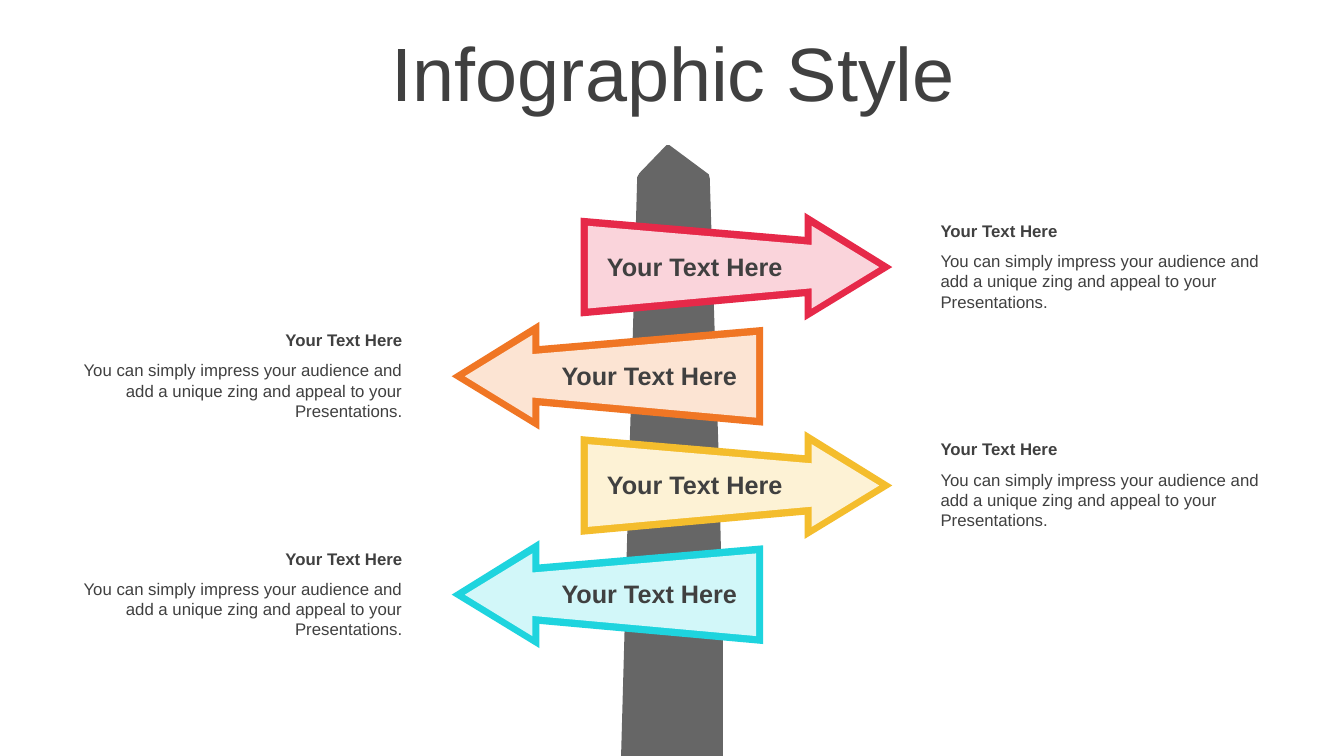
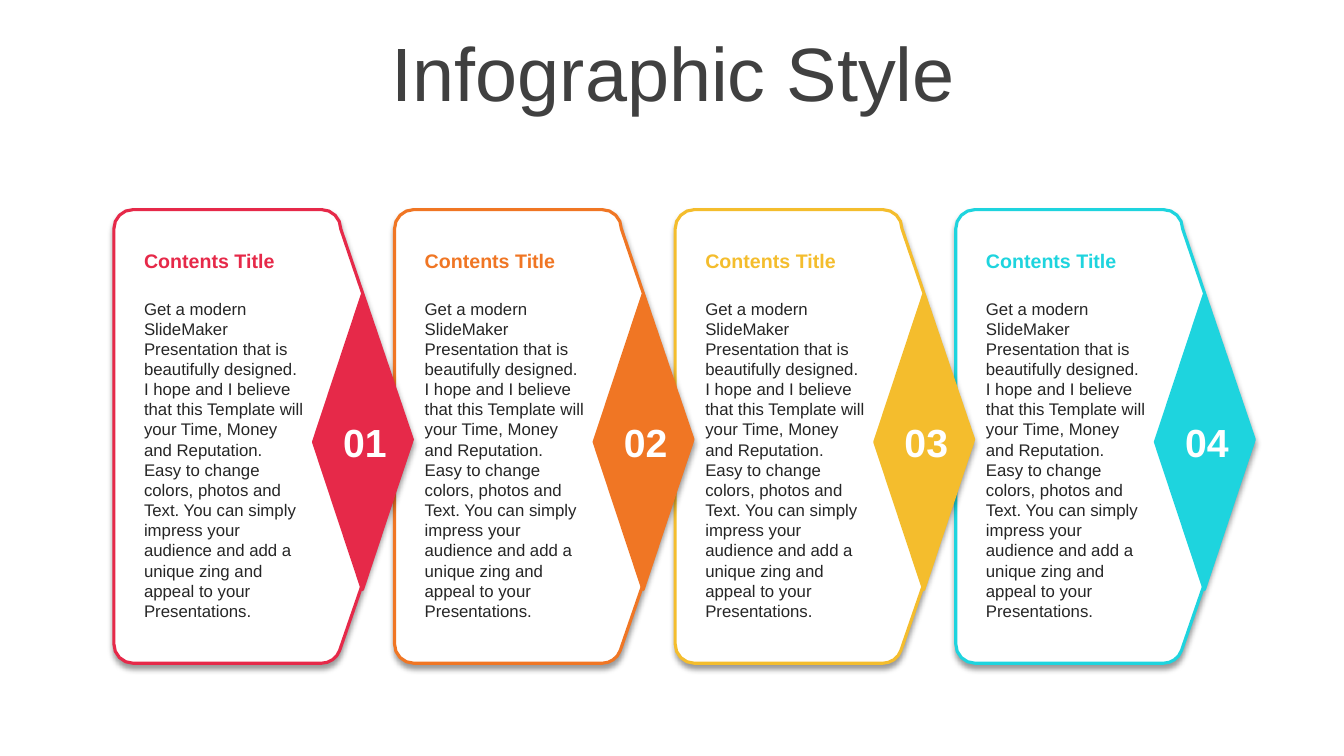
from math import cos, radians, sin

from lxml import etree
from pptx import Presentation
from pptx.dml.color import RGBColor
from pptx.enum import shapes, text
from pptx.oxml import ns
from pptx.util import Inches, Pt

FONT = "Arial"
DARK = "404040"
INK = "262626"
WHITE = "FFFFFF"
GREY = "666666"
HUES = ["E62949", "F07624", "F4BD2D", "1ED4DE"]
TINTS = ["FAD4DB", "FCE4D3", "FDF2D5", "D2F7F9"]
LEFT, MID, RIGHT = text.PP_ALIGN.LEFT, text.PP_ALIGN.CENTER, text.PP_ALIGN.RIGHT
TOP, MIDDLE = text.MSO_ANCHOR.TOP, text.MSO_ANCHOR.MIDDLE

HEAD = "Your Text Here"
NOTE = ("You can simply impress your audience and add a unique zing "
        "and appeal to your Presentations.")
BODY = ("Get a modern SlideMaker Presentation that is beautifully designed. "
        "I hope and I believe that this Template will your Time, Money and "
        "Reputation. Easy to change colors, photos and Text. You can simply "
        "impress your audience and add a unique zing and appeal to your "
        "Presentations.")

POST = [(0.16, 0.32), (0.18, 0.28), (0.45, 0), (0.48, 0), (0.87, 0.29),
        (0.88, 0.33), (0.97, 3.13), (1.01, 4.83), (1.01, 6.06), (0, 6.06)]
WIDE = 3.09
OUTER = [(0, 0.05), (2.22, 0.24), (2.22, 0), (3.09, 0.54),
         (2.22, 1.07), (2.22, 0.83), (0, 1.03)]
INNER = [(0.07, 0.13), (2.29, 0.32), (2.29, 0.13), (2.96, 0.54),
         (2.29, 0.95), (2.29, 0.75), (0.07, 0.95)]


def color(code):
    return RGBColor.from_string(code)


def write(frame, words, size=12, tone=DARK, bold=False, align=LEFT,
          anchor=TOP, pad=0.05):
    frame.word_wrap = True
    frame.auto_size = text.MSO_AUTO_SIZE.NONE
    frame.vertical_anchor = anchor
    frame.margin_top = frame.margin_bottom = Inches(pad)
    para = frame.paragraphs[0]
    para.alignment = align
    run = para.add_run()
    run.text = words
    font = run.font
    font.name, font.size, font.bold = FONT, Pt(size), bold
    font.color.rgb = color(tone)
    return para


def label(slide, box, words, **look):
    area = slide.shapes.add_textbox(*map(Inches, box))
    return write(area.text_frame, words, **look)


def paint(shape, fill, line=None):
    shape.shadow.inherit = False
    shape.fill.solid()
    shape.fill.fore_color.rgb = color(fill)
    if line:
        shape.line.color.rgb = color(line)
        shape.line.width = Pt(2.25)
    else:
        shape.line.fill.background()
    return shape


def outline(slide, x, y, points, fill, line=None):
    spots = [(Inches(x + dx), Inches(y + dy)) for dx, dy in points]
    pen = slide.shapes.build_freeform(*spots[0], scale=1.0)
    pen.add_line_segments(spots[1:], close=True)
    return paint(pen.convert_to_shape(), fill, line)


def shade(shape):
    effects = shape.element.spPr.find(ns.qn("a:effectLst"))
    outer = etree.SubElement(effects, ns.qn("a:outerShdw"), blurRad=str(Pt(4)),
                             dist=str(Pt(3)), dir="5400000", algn="t",
                             rotWithShape="0")
    tone = etree.SubElement(outer, ns.qn("a:srgbClr"), val="000000")
    etree.SubElement(tone, ns.qn("a:alpha"), val="40000")


def arc(x, y, start, end, radius=0.19, steps=4):
    turns = [radians(start + (end - start) * i / steps)
             for i in range(steps + 1)]
    return [(x + radius * cos(a), y + radius * sin(a)) for a in turns]


def start(deck, words):
    slide = deck.slides.add_slide(deck.slide_layouts[5])
    title = slide.shapes.title
    title.left, title.top = Inches(0.35), Inches(0.37)
    title.width, title.height = Inches(12.66), Inches(0.79)
    para = write(title.text_frame, words, size=54, align=MID, anchor=MIDDLE)
    para.line_spacing = 0.9
    return slide


def sign(slide, x, y, hue, tint, back):
    for points, fill in ((OUTER, hue), (INNER, tint)):
        if back:
            points = [(WIDE - dx, dy) for dx, dy in points]
        outline(slide, x, y, points, fill)
    label(slide, (x + (0.89 if back else 0.06), y + 0.33, 2.14, 0.4), HEAD,
          size=18, bold=True, align=MID)


def note(slide, x, y, align):
    label(slide, (x, y, 3.38, 0.3), HEAD, bold=True, align=align)
    label(slide, (x, y + 0.3, 3.38, 0.71), NOTE, align=align)


def signpost(deck):
    slide = start(deck, "Infographic Style")
    outline(slide, 6.16, 1.44, POST, GREY)
    for i, (hue, tint) in enumerate(zip(HUES, TINTS)):
        y = 2.11 + i * 3.25 / 3
        back = i % 2 == 1
        sign(slide, 4.48 if back else 5.76, y, hue, tint, back)
        note(slide, 0.71 if back else 9.23, y + 0.03, RIGHT if back else LEFT)


def card(slide, x, y, hue, number):
    edge = (arc(0.19, 0.19, 180, 270) + arc(2.06, 0.19, 270, 360)
            + [(2.96, 2.28)] + arc(2.06, 4.31, 20, 90)
            + arc(0.19, 4.31, 90, 180))
    shade(outline(slide, x, y, edge, WHITE, hue))
    gem = slide.shapes.add_shape(
        shapes.MSO_SHAPE.DIAMOND,
        *map(Inches, (x + 1.98, y + 0.84, 0.97, 2.93)))
    paint(gem, hue, hue)
    label(slide, (x + 0.2, y + 0.83, 1.78, 3.33), BODY, tone=INK)
    label(slide, (x + 0.2, y + 0.34, 1.78, 0.34), "Contents Title",
          size=14, tone=hue, bold=True)
    label(slide, (x + 2.05, y + 2.07, 0.88, 0.47), f"{number:02}", size=28,
          tone=WHITE, bold=True, align=MID, anchor=MIDDLE, pad=0)


def cards(deck):
    slide = start(deck, "Infographic Style")
    for i in reversed(range(len(HUES))):
        card(slide, 1.13 + i * 8.35 / 3, 2.08, HUES[i], i + 1)


def main():
    deck = Presentation()
    deck.slide_width, deck.slide_height = Inches(13.33), Inches(7.5)
    signpost(deck)
    cards(deck)
    deck.save("out.pptx")


if __name__ == "__main__":
    main()
